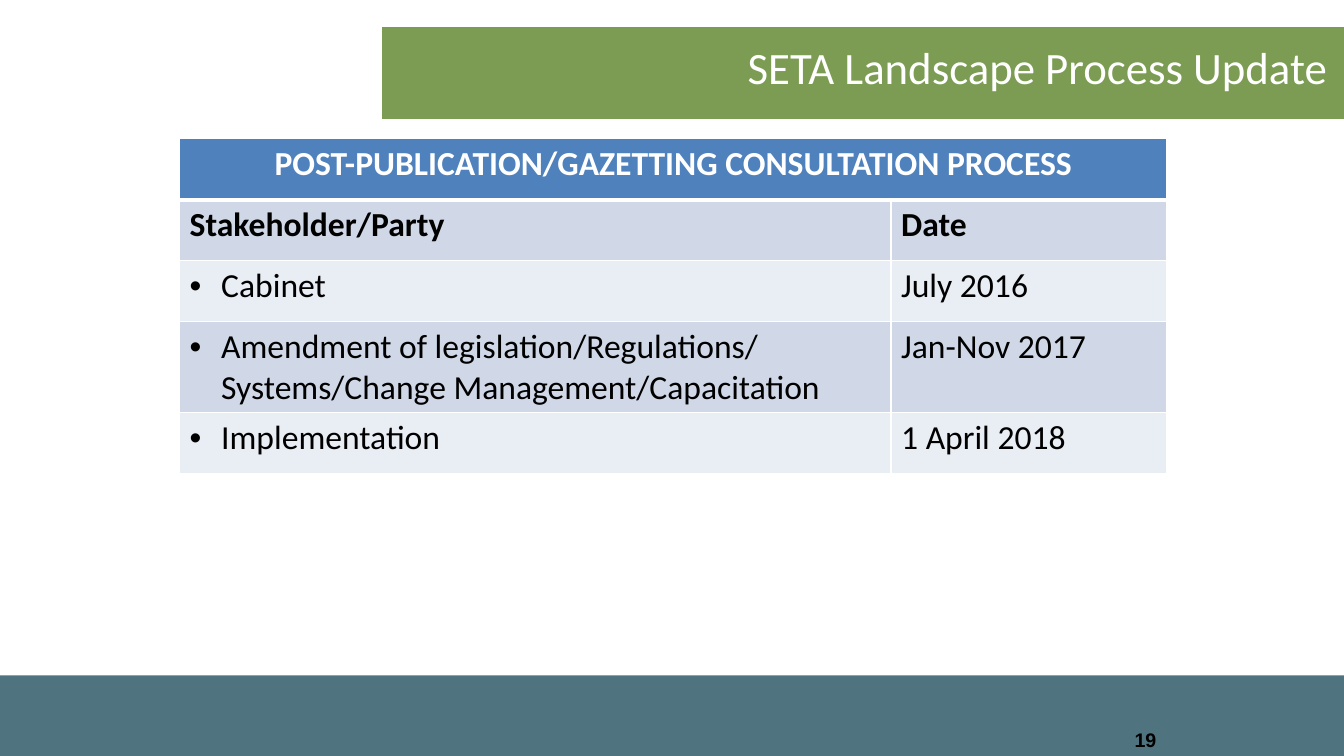
"""Build the SETA landscape process update slide."""
from typing import NamedTuple

from lxml.etree import SubElement as Sub
from pptx import Presentation
from pptx.dml.color import RGBColor
from pptx.enum.shapes import MSO_SHAPE as Shape
from pptx.enum.text import MSO_ANCHOR as Anchor, PP_ALIGN as Align
from pptx.oxml.ns import qn
from pptx.util import Pt


class Box(NamedTuple):
    left: float
    top: float
    width: float
    height: float

    def pts(self) -> list:
        return [Pt(side) for side in self]


class Band(NamedTuple):
    box: Box
    fill: str


class Row(NamedTuple):
    texts: tuple
    fill: str
    height: float = 43.4
    bold: bool = False
    bullet: bool = False


BANDS = [
    Band(Box(0, 482.4, 960, 57.6), "4F737F"),
    Band(Box(272.9, 19.4, 687.1, 65.5), "7B9C52"),
]
HEAD = "POST-PUBLICATION/GAZETTING CONSULTATION PROCESS"
WORK = "Amendment of legislation/Regulations/ Systems/Change Management/Capacitation"
DARK, LIGHT = "D0D8E8", "E9EDF4"
ROWS = [
    Row((HEAD,), "4F81BD", bold=True),
    Row(("Stakeholder/Party", "Date"), DARK, bold=True),
    Row(("Cabinet", "July 2016"), LIGHT, bullet=True),
    Row((WORK, "Jan-Nov 2017"), DARK, 65.5, bullet=True),
    Row(("Implementation", "1 April 2018"), LIGHT, bullet=True),
]
COLS = [508.2, 197.1]
GRID = Box(128.3, 99.2, sum(COLS), sum(row.height for row in ROWS))


def tint(code: str) -> RGBColor:
    return RGBColor.from_string(code)


def write(frame, text: str, *, size: float = 24, font: str = "Calibri",
          color: str = "000000", bold: bool = False, align=Align.LEFT,
          bullet: bool = False) -> None:
    para = frame.paragraphs[0]
    para.alignment = align
    if bullet:
        props = para._p.get_or_add_pPr()
        props.set("marL", str(Pt(22.5)))
        props.set("indent", str(-Pt(22.5)))
        Sub(props, qn("a:buFont"), typeface="Arial")
        Sub(props, qn("a:buChar"), char="•")
    run = para.add_run()
    run.text = text
    run.font.name, run.font.size, run.font.bold = font, Pt(size), bold
    run.font.color.rgb = tint(color)


def draw_band(slide, band: Band) -> None:
    shape = slide.shapes.add_shape(Shape.RECTANGLE, *band.box.pts())
    shape.shadow.inherit = False
    shape.fill.solid()
    shape.fill.fore_color.rgb = tint(band.fill)
    shape.line.fill.background()


def add_text(slide, box: Box, text: str, *, wrap: bool = True,
             anchor=Anchor.TOP, **form) -> None:
    frame = slide.shapes.add_textbox(*box.pts()).text_frame
    frame.word_wrap = wrap
    frame.vertical_anchor = anchor
    write(frame, text, **form)


def edge(cell, **widths: float) -> None:
    props = cell._tc.get_or_add_tcPr()
    for side in "LRTB":
        line = Sub(props, qn(f"a:ln{side}"), w=str(Pt(widths.get(side, 1))))
        Sub(Sub(line, qn("a:solidFill")), qn("a:srgbClr"), val="FFFFFF")


def draw_table(slide) -> None:
    table = slide.shapes.add_table(len(ROWS), len(COLS), *GRID.pts()).table
    table.first_row = table.horz_banding = False
    for col, width in zip(table.columns, COLS):
        col.width = Pt(width)
    table.cell(0, 0).merge(table.cell(0, 1))
    for i, row in enumerate(ROWS):
        table.rows[i].height = Pt(row.height)
        for cell in table.rows[i].cells:
            edge(cell, T=3 if i == 1 else 1, B=3 if i == 0 else 1)
            cell.fill.solid()
            cell.fill.fore_color.rgb = tint(row.fill)
        for j, text in enumerate(row.texts):
            write(table.cell(i, j).text_frame, text, bold=row.bold,
                  color="000000" if i else "FFFFFF",
                  align=Align.LEFT if i else Align.CENTER,
                  bullet=row.bullet and j == 0)


def main() -> None:
    deck = Presentation()
    deck.slide_width, deck.slide_height = Pt(960), Pt(540)
    slide = deck.slides.add_slide(deck.slide_layouts[6])
    for band in BANDS:
        draw_band(slide, band)
    add_text(slide, Box(665.3, 514.1, 167.8, 28.8), "19", size=14,
             font="Arial", bold=True, align=Align.RIGHT, anchor=Anchor.MIDDLE)
    draw_table(slide)
    add_text(slide, Box(524.9, 24.5, 432.7, 46.1),
             "SETA Landscape Process Update", size=32, color="FFFFFF",
             align=Align.CENTER, wrap=False)
    deck.save("out.pptx")


if __name__ == "__main__":
    main()
